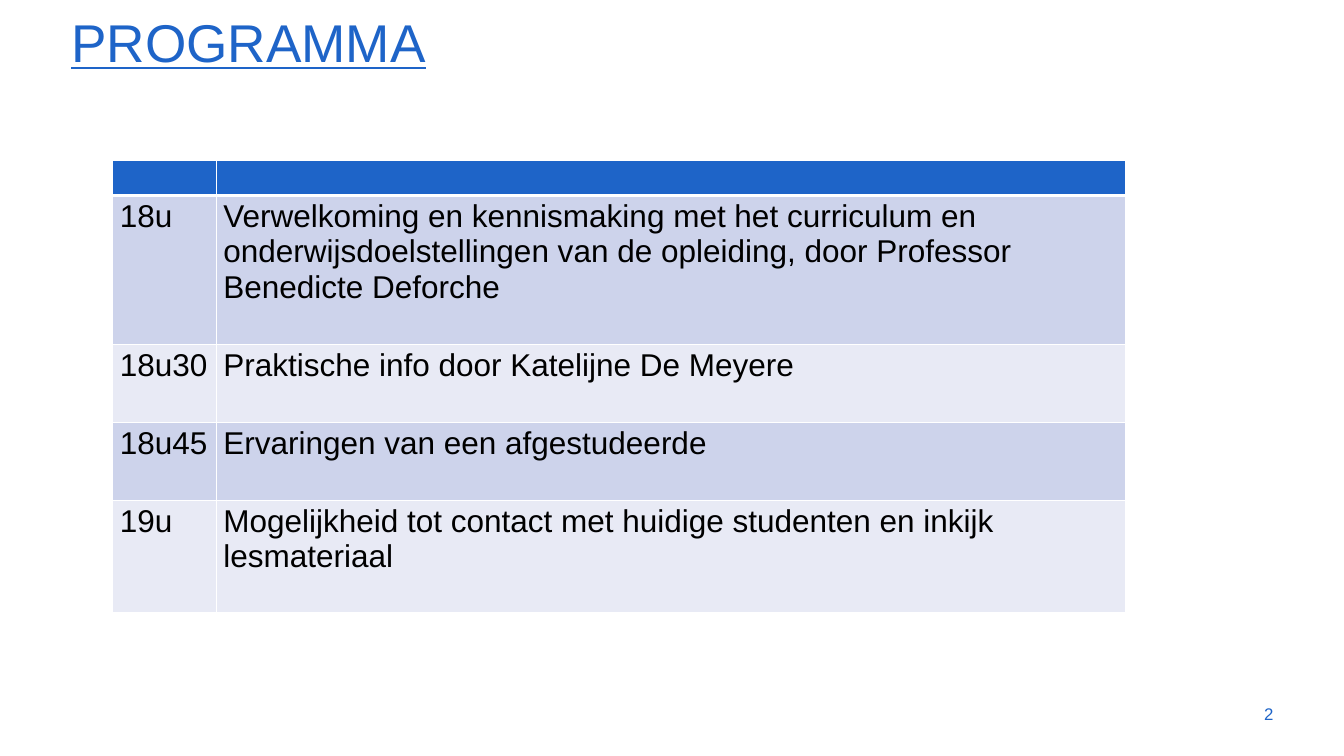
from dataclasses import dataclass
from typing import Any

from lxml.etree import SubElement
from pptx import Presentation
from pptx.dml.color import RGBColor
from pptx.enum.text import MSO_ANCHOR as Anchor, PP_ALIGN as Align
from pptx.oxml.ns import qn
from pptx.util import Inches, Length, Pt

BLUE = RGBColor(0x1E, 0x64, 0xC8)
BLACK = RGBColor(0x00, 0x00, 0x00)
WHITE = RGBColor(0xFF, 0xFF, 0xFF)
BAND_DARK = RGBColor(0xCD, 0xD3, 0xEB)
BAND_LIGHT = RGBColor(0xE8, 0xEA, 0xF5)

WIDTH, HEIGHT = Inches(18.96), Inches(10.67)


def across(percent: float) -> Length:
    return Length(round(WIDTH * percent / 100))


def down(percent: float) -> Length:
    return Length(round(HEIGHT * percent / 100))


@dataclass(frozen=True)
class Label:
    text: str
    left: float
    top: float
    width: float
    height: float
    anchor: Anchor
    paragraph: dict[str, Any]
    font: dict[str, Any]


@dataclass(frozen=True)
class Session:
    time: str
    activity: str
    height: float


LABELS = [
    Label("PROGRAMMA", 4.8, 1.41, 90.61, 8.81, Anchor.BOTTOM,
          {"line_spacing": 0.9}, {"size": Pt(54), "underline": True}),
    Label("2", 89.93, 91.75, 5.33, 5.34, Anchor.MIDDLE,
          {"alignment": Align.RIGHT}, {"size": Pt(17.1)}),
]

SESSIONS = [
    Session("", "", 4.59),
    Session("18u", "Verwelkoming en kennismaking met het curriculum en "
            "onderwijsdoelstellingen van de opleiding, door Professor "
            "Benedicte Deforche", 19.68),
    Session("18u30", "Praktische info door Katelijne De Meyere", 10.31),
    Session("18u45", "Ervaringen van een afgestudeerde", 10.31),
    Session("19u", "Mogelijkheid tot contact met huidige studenten en inkijk "
            "lesmateriaal", 14.9),
]
COLUMNS = [7.7, 67.67]


def apply_format(target: Any, values: dict[str, Any]) -> None:
    for attribute, value in values.items():
        setattr(target, attribute, value)


def style_font(font: Any, color: RGBColor, values: dict[str, Any]) -> None:
    apply_format(font, {"name": "Arial"} | values)
    font.color.rgb = color


def add_label(slide: Any, label: Label) -> None:
    frame = slide.shapes.add_textbox(
        across(label.left), down(label.top),
        across(label.width), down(label.height)).text_frame
    apply_format(frame, {"word_wrap": True, "vertical_anchor": label.anchor,
                         "text": label.text})
    line = frame.paragraphs[0]
    apply_format(line, label.paragraph)
    style_font(line.runs[0].font, BLUE, label.font)


def add_borders(cell: Any, widths: dict[str, float]) -> None:
    properties = cell._tc.get_or_add_tcPr()
    for side, width in widths.items():
        border = SubElement(properties, qn(f"a:{side}"), w=str(Pt(width)))
        fill = SubElement(border, qn("a:solidFill"))
        SubElement(fill, qn("a:srgbClr"), val=str(WHITE))


def add_programme(slide: Any, sessions: list[Session]) -> None:
    table = slide.shapes.add_table(
        len(sessions), len(COLUMNS), across(8.39), down(21.27),
        across(sum(COLUMNS)), down(sum(s.height for s in sessions))).table
    for column, width in zip(table.columns, COLUMNS):
        column.width = across(width)
    for index, session in enumerate(sessions):
        table.rows[index].height = down(session.height)
        band = BLUE if index == 0 else BAND_DARK if index % 2 else BAND_LIGHT
        top, bottom = {0: (1, 3), 1: (3, 1)}.get(index, (1, 1))
        for cell, text in zip(table.rows[index].cells,
                              (session.time, session.activity)):
            add_borders(cell, {"lnL": 1, "lnR": 1, "lnT": top, "lnB": bottom})
            cell.fill.solid()
            cell.fill.fore_color.rgb = band
            if text:
                cell.text = text
                style_font(cell.text_frame.paragraphs[0].runs[0].font, BLACK,
                           {"size": Pt(32), "bold": False})


def main() -> None:
    deck = Presentation()
    apply_format(deck, {"slide_width": WIDTH, "slide_height": HEIGHT})
    slide = deck.slides.add_slide(deck.slide_layouts[6])
    for label in LABELS:
        add_label(slide, label)
    add_programme(slide, SESSIONS)
    deck.save("out.pptx")


if __name__ == "__main__":
    main()
